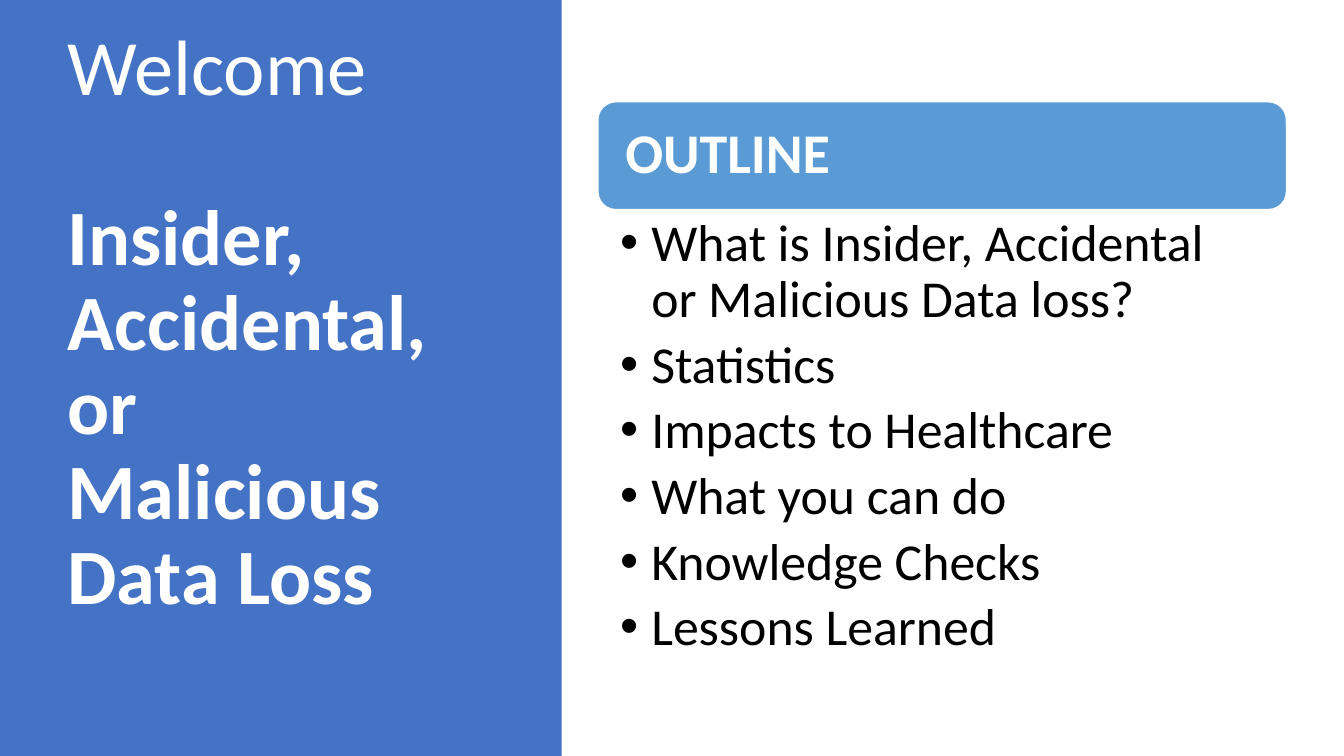
from lxml.etree import SubElement
from pptx import Presentation
from pptx.dml.color import RGBColor
from pptx.enum.shapes import MSO_SHAPE
from pptx.enum.text import MSO_ANCHOR, PP_ALIGN
from pptx.oxml.ns import qn
from pptx.util import Inches, Pt

WIDE, HIGH = 13.33, 7.5
HUES = {"panel": "4472C4", "bar": "5B9BD5", "white": "FFFFFF", "black": "000000"}
TITLE = ["Welcome", "Insider, Accidental, or Malicious Data Loss"]
TOPICS = [
    "What is Insider, Accidental or Malicious Data loss?",
    "Statistics",
    "Impacts to Healthcare",
    "What you can do",
    "Knowledge Checks",
    "Lessons Learned",
]


def hue(name):
    """Return a named colour."""
    return RGBColor.from_string(HUES[name])


def block(slide, kind, box, fill):
    """Draw a filled shape without a shadow."""
    shape = slide.shapes.add_shape(kind, *map(Inches, box))
    shape.shadow.inherit = False
    shape.fill.solid()
    shape.fill.fore_color.rgb = hue(fill)
    shape.line.fill.background()
    return shape


def frame(shape, pads, anchor=MSO_ANCHOR.TOP):
    """Set the wrapping, insets and anchor of a shape's text."""
    text = shape.text_frame
    text.word_wrap = True
    text.vertical_anchor = anchor
    text.margin_left, text.margin_top, text.margin_right, text.margin_bottom = map(Inches, pads)
    return text


def style(para, size, tint, bold=False):
    """Set the font and spacing of a paragraph."""
    para.alignment = PP_ALIGN.LEFT
    para.line_spacing = 0.9
    para.font.name = "Calibri"
    para.font.size = Pt(size)
    para.font.bold = bold
    para.font.color.rgb = hue(tint)


def bullet(para):
    """Give a paragraph a hanging bullet."""
    props = para._p.get_or_add_pPr()
    props.set("marL", str(Inches(0.31)))
    props.set("indent", str(-Inches(0.31)))
    SubElement(props, qn("a:buFont")).set("typeface", "Arial")
    SubElement(props, qn("a:buChar")).set("char", "•")


def welcome(slide, box):
    """Place the coloured panel and the title."""
    left, top, wide, high = box
    block(slide, MSO_SHAPE.RECTANGLE, box, "panel")
    area = left + 0.57, top + 0.03 * high, 0.745 * wide, 0.85 * high
    text = frame(slide.shapes.add_textbox(*map(Inches, area)), (0.1, 0.05, 0.1, 0.05))
    text.text = "\n".join(TITLE)
    first, last = text.paragraphs
    style(first, 56, "white")
    style(last, 56, "white", True)
    last.space_before = Pt(61)


def outline(slide, box):
    """Place the heading bar with the topic list below it."""
    left, top, wide, high = box
    head = 1.07
    bar = block(slide, MSO_SHAPE.ROUNDED_RECTANGLE, (left, top, wide, head), "bar")
    bar.line.color.rgb = hue("white")
    bar.line.width = Pt(1)
    text = frame(bar, (0.22, 0.17, 0.22, 0.17), MSO_ANCHOR.MIDDLE)
    text.text = "OUTLINE"
    style(text.paragraphs[0], 40, "white", True)
    area = left, top + head, wide, high - head
    text = frame(slide.shapes.add_textbox(*map(Inches, area)), (0.22, 0.07, 0.37, 0.07))
    text.text = "\n".join(TOPICS)
    for para in text.paragraphs:
        bullet(para)
        style(para, 37, "black")
        para.space_after = Pt(7)


def main():
    """Build and save the slide."""
    deck = Presentation()
    deck.slide_width, deck.slide_height = Inches(WIDE), Inches(HIGH)
    slide = deck.slides.add_slide(deck.slide_layouts[6])
    welcome(slide, (0, 0, 5.57, HIGH))
    outline(slide, (5.93, 1.01, 6.83, 5.85))
    deck.save("out.pptx")


if __name__ == "__main__":
    main()
